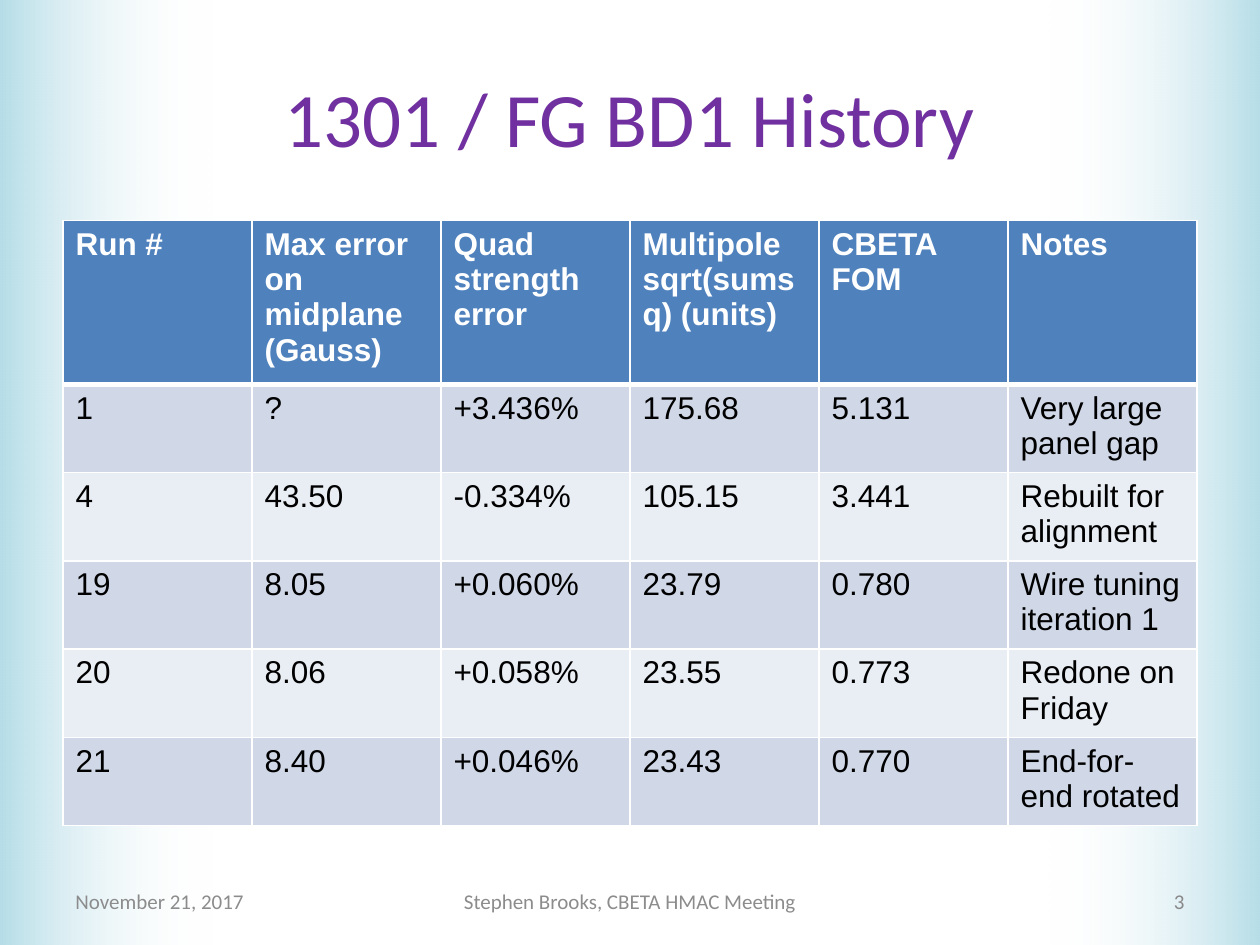
"""Build the run history slide with python-pptx."""
from dataclasses import dataclass

from lxml.etree import SubElement
from pptx import Presentation
from pptx.dml.color import RGBColor as RGB
from pptx.enum.shapes import MSO_SHAPE as SHAPE
from pptx.enum.text import MSO_ANCHOR as ANCHOR, PP_ALIGN as ALIGN
from pptx.oxml.ns import qn
from pptx.util import Pt


@dataclass(frozen=True)
class Theme:
    """Colours, fonts and type sizes of the slide."""
    edge: RGB = RGB.from_string("B7DEE8")
    white: RGB = RGB.from_string("FFFFFF")
    black: RGB = RGB.from_string("000000")
    title: RGB = RGB.from_string("7030A0")
    header: RGB = RGB.from_string("4F81BD")
    odd: RGB = RGB.from_string("D0D8E8")
    even: RGB = RGB.from_string("E9EDF4")
    footer: RGB = RGB.from_string("8C8C8C")
    number: RGB = RGB.from_string("898989")
    heading_font: str = "Calibri"
    table_font: str = "Arial"
    title_size: int = 44
    table_size: int = 18
    footer_size: int = 12


THEME = Theme()
WIDTH, HEIGHT = 720, 540
HISTORY = [
    ("Run #", "Max error on midplane (Gauss)", "Quad strength error",
     "Multipole sqrt(sumsq) (units)", "CBETA FOM", "Notes"),
    ("1", "?", "+3.436%", "175.68", "5.131", "Very large panel gap"),
    ("4", "43.50", "-0.334%", "105.15", "3.441", "Rebuilt for alignment"),
    ("19", "8.05", "+0.060%", "23.79", "0.780", "Wire tuning iteration 1"),
    ("20", "8.06", "+0.058%", "23.55", "0.773", "Redone on Friday"),
    ("21", "8.40", "+0.046%", "23.43", "0.770", "End-for-end rotated"),
]


def style_text(p, text, font, size, color, align=ALIGN.LEFT, bold=False):
    """Fill a paragraph with text in one style."""
    p.text, p.alignment = text, align
    p.font.name, p.font.size, p.font.bold = font, Pt(size), bold
    p.font.color.rgb = color


def add_label(slide, box, text, size, color, align):
    """Add a vertically centred text box."""
    tf = slide.shapes.add_textbox(*map(Pt, box)).text_frame
    tf.word_wrap, tf.vertical_anchor = True, ANCHOR.MIDDLE
    style_text(tf.paragraphs[0], text, THEME.heading_font, size, color, align)


def add_edge_fade(slide, box, rotation):
    """Add a band that fades from the edge colour to clear."""
    sp = slide.shapes.add_shape(SHAPE.RECTANGLE, *map(Pt, box))
    sp.shadow.inherit = False
    sp.rotation = rotation
    sp.line.fill.background()
    sp.fill.gradient()
    sp.fill.gradient_angle = 0
    stops = sp.fill.gradient_stops
    for stop, color, position in zip(stops, (THEME.edge, THEME.white), (0, 1)):
        stop.color.rgb, stop.position = color, position
    clear = list(sp._element.iter(qn("a:srgbClr")))[-1]
    SubElement(clear, qn("a:alpha"), val="0")


def add_background(slide, box, band=121.68):
    """Fade both sides of the box."""
    x, y, w, h = box
    add_edge_fade(slide, (x + w - band, y, band, h), 180)
    add_edge_fade(slide, (x, y, band, h), 0)


def set_borders(cell, top=1, bottom=1):
    """Draw white borders of the given weights round a cell."""
    weights = {"a:lnL": 1, "a:lnR": 1, "a:lnT": top, "a:lnB": bottom}
    for tag, weight in weights.items():
        ln = SubElement(cell._tc.get_or_add_tcPr(), qn(tag), w=str(Pt(weight)))
        fill = SubElement(ln, qn("a:solidFill"))
        SubElement(fill, qn("a:srgbClr"), val=str(THEME.white))


def add_history_table(slide, box, rows, header_height=88):
    """Add a table with a header row and banded body rows."""
    x, y, w, h = box
    cols = len(rows[0])
    table = slide.shapes.add_table(len(rows), cols, *map(Pt, box)).table
    for col in table.columns:
        col.width = Pt(w / cols)
    body_height = (h - header_height) / (len(rows) - 1)
    for i, values in enumerate(rows):
        head = i == 0
        table.rows[i].height = Pt(header_height if head else body_height)
        band = THEME.header if head else THEME.odd if i % 2 else THEME.even
        color = THEME.white if head else THEME.black
        for j, value in enumerate(values):
            cell = table.cell(i, j)
            set_borders(cell, top=3 if i == 1 else 1, bottom=3 if head else 1)
            cell.fill.solid()
            cell.fill.fore_color.rgb = band
            style_text(cell.text_frame.paragraphs[0], value, THEME.table_font,
                       THEME.table_size, color, bold=head)


def add_footer(slide, box, date, meeting, number):
    """Place date, meeting and slide number along the box."""
    x, y, w, h = box
    side, middle = 168, 228
    parts = [
        (x, side, date, THEME.footer, ALIGN.LEFT),
        (x + (w - middle) / 2, middle, meeting, THEME.footer, ALIGN.CENTER),
        (x + w - side, side, number, THEME.number, ALIGN.RIGHT),
    ]
    for left, width, text, color, align in parts:
        add_label(slide, (left, y, width, h), text, THEME.footer_size, color, align)


def main():
    """Build and save the slide."""
    prs = Presentation()
    prs.slide_width, prs.slide_height = Pt(WIDTH), Pt(HEIGHT)
    slide = prs.slides.add_slide(prs.slide_layouts[6])
    margin = 36
    inner = WIDTH - 2 * margin
    add_background(slide, (0, 0, WIDTH, HEIGHT))
    add_label(slide, (margin, 21.6, inner, 90), "1301 / FG BD1 History",
              THEME.title_size, THEME.title, ALIGN.CENTER)
    add_history_table(slide, (margin, 126, inner, 325), HISTORY)
    add_footer(slide, (margin, 500.5, inner, 28.8), "November 21, 2017",
               "Stephen Brooks, CBETA HMAC Meeting", "3")
    prs.save("out.pptx")


if __name__ == "__main__":
    main()
